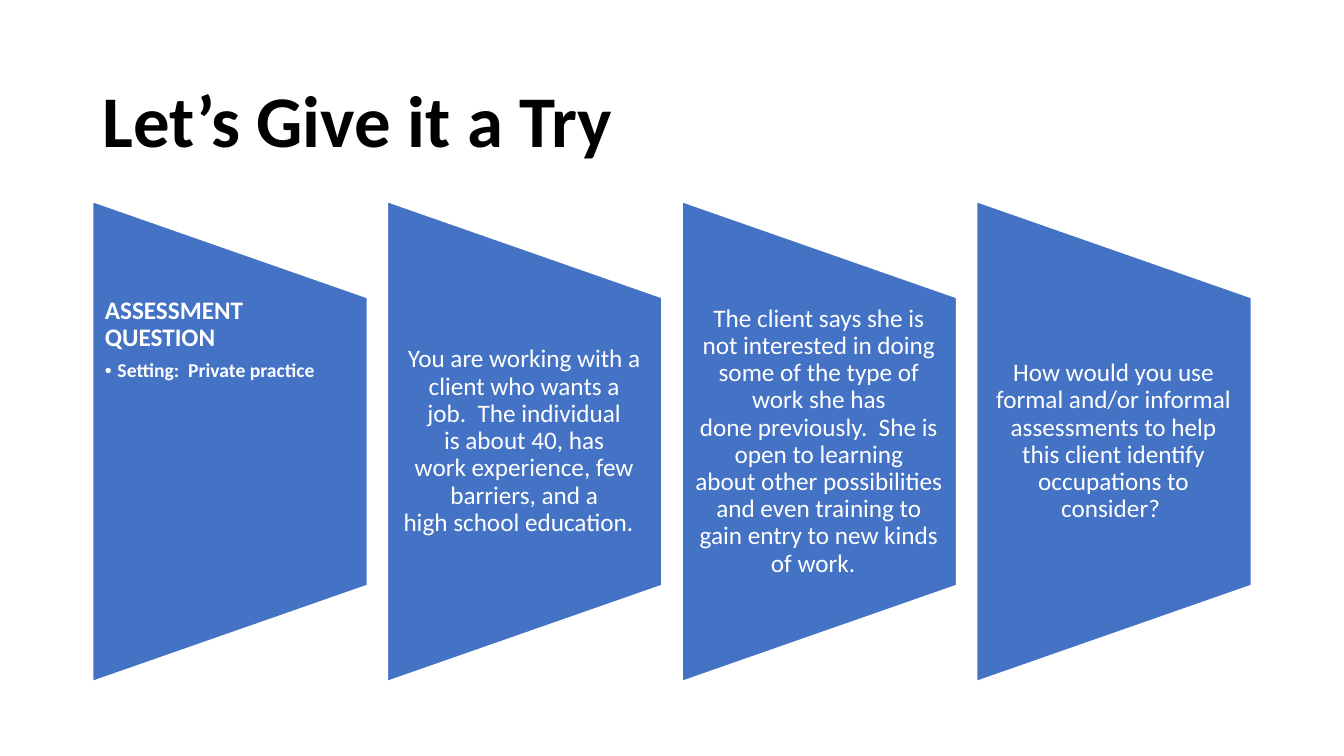
from dataclasses import dataclass

from lxml import etree
from pptx import Presentation
from pptx.dml.color import RGBColor
from pptx.enum import shapes, text
from pptx.oxml import ns
from pptx.util import Inches, Pt


@dataclass(frozen=True)
class Theme:
    """Colours and type sizes of the slide."""
    font: str = "Calibri"
    bullet_font: str = "Arial"
    ink: RGBColor = RGBColor(0x00, 0x00, 0x00)
    paper: RGBColor = RGBColor(0xFF, 0xFF, 0xFF)
    panel: RGBColor = RGBColor(0x44, 0x72, 0xC4)
    title_size: int = 52
    body_size: int = 18
    detail_size: int = 14
    line_spacing: float = 0.9


THEME = Theme()
HARD_SPACE_MARK = "~"
HARD_SPACE = chr(160)
TITLE = "Let’s Give it a Try"
HEADING = "ASSESSMENT QUESTION"
SETTING = "Setting:~ Private practice"
SCENARIO = [
    "You are working with a client who wants a job.~~The individual is~about 40, has "
    "work~experience, few barriers, and a high~school~education.~~",
    "The client says she is not interested~in doing some of the type of work~she has "
    "done~previously.~~She is open to learning about~other~possibilities and even "
    "training to gain entry to~new kinds of~work.~~",
    "How would you use formal~and/or informal assessments to help this~client~identify "
    "occupations to consider?~",
]


def add_text_frame(slide, left, top, width, height, anchor):
    """Add a wrapping text box and return its text frame."""
    box = slide.shapes.add_textbox(Inches(left), Inches(top), Inches(width), Inches(height))
    frame = box.text_frame
    frame.word_wrap = True
    frame.vertical_anchor = anchor
    return frame


def style_paragraph(paragraph, words, size, color, bold=False, align=text.PP_ALIGN.LEFT, after=0):
    """Fill a paragraph, with marked spaces kept unbroken, and set its font and spacing."""
    paragraph.text = words.replace(HARD_SPACE_MARK, HARD_SPACE)
    paragraph.alignment = align
    paragraph.line_spacing = THEME.line_spacing
    paragraph.space_after = Pt(after)
    paragraph.font.name = THEME.font
    paragraph.font.size = Pt(size)
    paragraph.font.bold = bold
    paragraph.font.color.rgb = color


def add_bullet(paragraph, indent):
    """Give a paragraph a hanging round bullet."""
    properties = paragraph._p.get_or_add_pPr()
    properties.set("marL", str(Inches(indent)))
    properties.set("indent", str(-Inches(indent)))
    for tag, attributes in (("a:buFont", {"typeface": THEME.bullet_font}),
                            ("a:buChar", {"char": "•"})):
        element = etree.Element(ns.qn(tag), attributes)
        properties.insert_element_before(element, "a:tabLst", "a:defRPr", "a:extLst")


def add_title(slide, left, top, width, height):
    """Place the slide title."""
    frame = add_text_frame(slide, left, top, width, height, text.MSO_ANCHOR.MIDDLE)
    style_paragraph(frame.paragraphs[0], TITLE, THEME.title_size, THEME.ink, bold=True)


def add_panel(slide, left, top, width, height, anchor):
    """Draw a panel tapering to the right and return its text frame."""
    center_x, center_y = left + width / 2, top + height / 2
    panel = slide.shapes.add_shape(
        shapes.MSO_SHAPE.FLOWCHART_MANUAL_OPERATION,
        Inches(center_x - height / 2), Inches(center_y - width / 2),
        Inches(height), Inches(width))
    panel.rotation = 270
    panel.shadow.inherit = False
    panel.fill.solid()
    panel.fill.fore_color.rgb = THEME.panel
    panel.line.color.rgb = THEME.paper
    panel.line.width = Pt(1)

    frame = add_text_frame(slide, left, top + height / 5, width, height * 3 / 5, anchor)
    frame.margin_left, frame.margin_right = Inches(0.12), Inches(0.13)
    frame.margin_top = frame.margin_bottom = 0
    return frame


def add_question_panel(slide, left, top, width, height):
    """Place the panel with the heading and the setting."""
    frame = add_panel(slide, left, top, width, height, text.MSO_ANCHOR.TOP)
    style_paragraph(frame.paragraphs[0], HEADING, THEME.body_size, THEME.paper, True, after=6.3)
    setting = frame.add_paragraph()
    style_paragraph(setting, SETTING, THEME.detail_size, THEME.paper, True, after=2.1)
    setting.level = 1
    add_bullet(setting, 0.125)


def add_scenario_panel(slide, left, top, width, height, words):
    """Place a panel with one centred part of the scenario."""
    frame = add_panel(slide, left, top, width, height, text.MSO_ANCHOR.MIDDLE)
    style_paragraph(frame.paragraphs[0], words, THEME.body_size, THEME.paper,
                    align=text.PP_ALIGN.CENTER, after=6.3)


def add_panel_row(slide, left, top, width, height, gap):
    """Place the question panel and the scenario panels at equal gaps."""
    count = len(SCENARIO) + 1
    panel_width = (width - gap * (count - 1)) / count
    add_question_panel(slide, left, top, panel_width, height)
    for index, words in enumerate(SCENARIO, start=1):
        add_scenario_panel(slide, left + index * (panel_width + gap), top,
                           panel_width, height, words)


def main():
    """Build and save the presentation."""
    presentation = Presentation()
    presentation.slide_width = Inches(13.33)
    presentation.slide_height = Inches(7.5)
    slide = presentation.slides.add_slide(presentation.slide_layouts[6])
    add_title(slide, 0.92, 0.61, 11.5, 1.24)
    add_panel_row(slide, 0.92, 2, 11.49, 4.76, 0.2)
    presentation.save("out.pptx")


if __name__ == "__main__":
    main()
